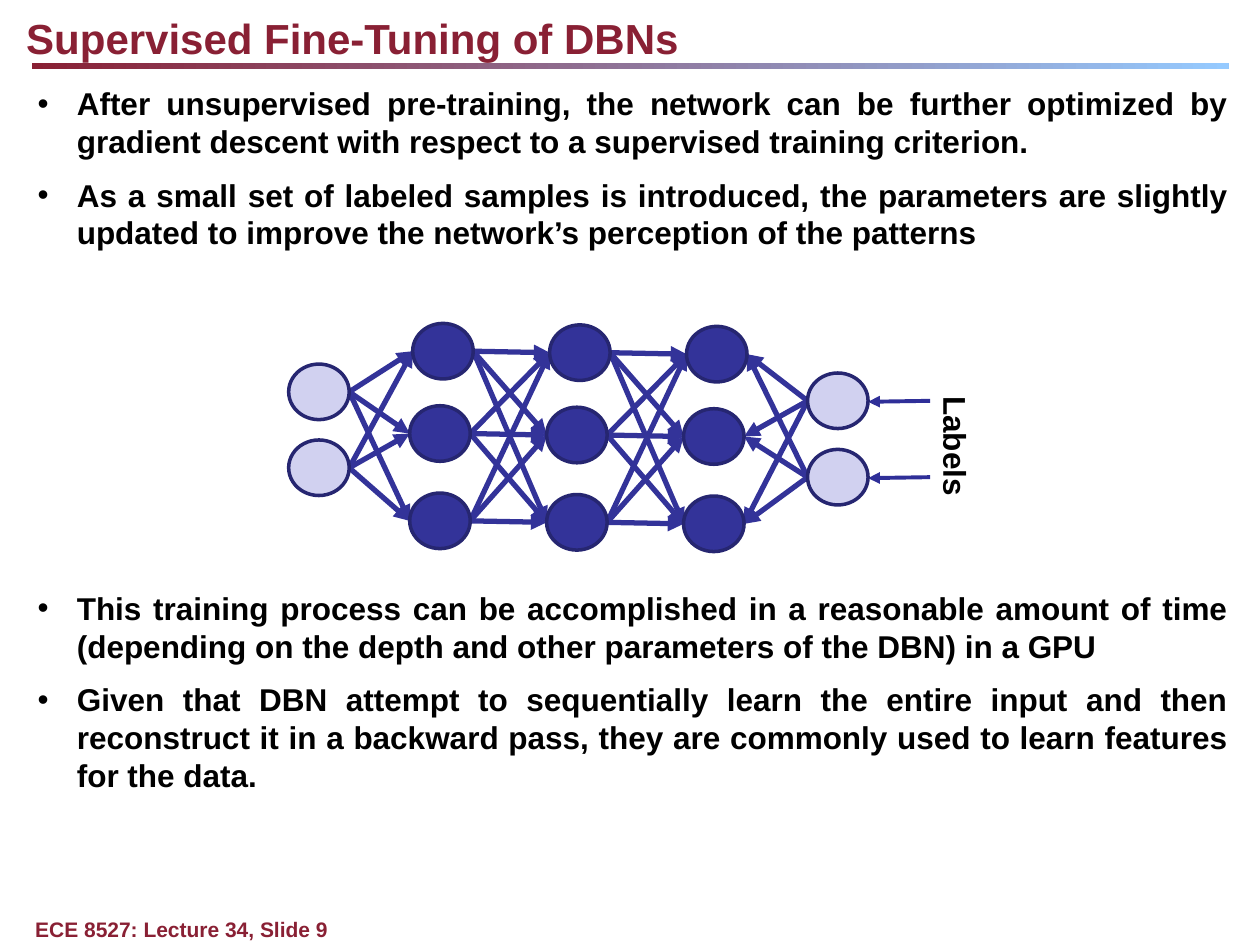
from dataclasses import dataclass
from itertools import product

from lxml.etree import SubElement
from pptx import Presentation
from pptx.dml.color import RGBColor
from pptx.enum.shapes import MSO_CONNECTOR, MSO_SHAPE
from pptx.enum.text import PP_ALIGN
from pptx.oxml.ns import qn
from pptx.shapes.group import GroupShape
from pptx.slide import Slide
from pptx.text.text import TextFrame, _Paragraph
from pptx.util import Cm, Pt

MAROON, SKY, BLACK = "892034", "95CAFF", "000000"
INDIGO, NAVY, LAVENDER = "333399", "262671", "D1D1F0"
LABEL_ARROW = "2F2F98"
NODE_WIDTH, NODE_HEIGHT = 1.22, 1.12
INDENT = 0.79

BULLETS = [
    "After unsupervised pre-training, the network can be further optimized by "
    "gradient descent with respect to a supervised training criterion.",
    "As a small set of labeled samples is introduced, the parameters are slightly "
    "updated to improve the network’s perception of the patterns",
    "This training process can be accomplished in a reasonable amount of time "
    "(depending on the depth and other parameters of the DBN) in a GPU",
    "Given that DBN attempt to sequentially learn the entire input and then "
    "reconstruct it in a backward pass, they are commonly used to learn features "
    "for the data.",
]
FIRST_BULLET_BELOW_NETWORK = 2


@dataclass(frozen=True)
class Node:
    """A neuron, placed by its centre in centimetres."""
    x: float
    y: float
    color: str

    @property
    def left(self) -> float:
        return self.x - NODE_WIDTH / 2

    @property
    def right(self) -> float:
        return self.x + NODE_WIDTH / 2


def rgb(color: str) -> RGBColor:
    return RGBColor.from_string(color)


def add_text_frame(shapes, left: float, top: float, width: float, height: float,
                   inset: bool = False, wrap: bool = True) -> TextFrame:
    frame = shapes.add_textbox(Cm(left), Cm(top), Cm(width), Cm(height)).text_frame
    frame.word_wrap = wrap
    if not inset:
        frame.margin_left = frame.margin_right = Cm(0)
        frame.margin_top = frame.margin_bottom = Cm(0)
    return frame


def add_run(paragraph: _Paragraph, text: str, size: float, color: str) -> None:
    run = paragraph.add_run()
    run.text = text
    run.font.name = "Arial"
    run.font.size = Pt(size)
    run.font.bold = True
    run.font.color.rgb = rgb(color)


def add_bullet(paragraph: _Paragraph) -> None:
    properties = paragraph._p.get_or_add_pPr()
    properties.set("marL", str(Cm(INDENT)))
    properties.set("indent", str(-Cm(INDENT)))
    SubElement(properties, qn("a:buFont"), typeface="Arial")
    SubElement(properties, qn("a:buChar"), char="•")


def add_title_rule(slide: Slide) -> None:
    rule = slide.shapes.add_shape(
        MSO_SHAPE.RECTANGLE, Cm(0.64), Cm(1.27), Cm(24.13), Cm(0.13))
    rule.shadow.inherit = False
    rule.line.fill.background()
    rule.fill.gradient()
    rule.fill.gradient_angle = 0
    for stop, color in zip(rule.fill.gradient_stops, (MAROON, SKY)):
        stop.color.rgb = rgb(color)


def add_body(slide: Slide) -> None:
    frame = add_text_frame(slide.shapes, 0.76, 1.7, 24, 16.33)
    for index, text in enumerate(BULLETS):
        paragraph = frame.add_paragraph() if index else frame.paragraphs[0]
        paragraph.alignment = PP_ALIGN.JUSTIFY
        if index == FIRST_BULLET_BELOW_NETWORK:
            paragraph.space_before = Pt(184)
        paragraph.space_after = Pt(9)
        add_bullet(paragraph)
        add_run(paragraph, text, 18, BLACK)


def add_arrow(group: GroupShape, start: tuple[float, float],
              end: tuple[float, float], color: str, weight: float) -> None:
    arrow = group.shapes.add_connector(
        MSO_CONNECTOR.STRAIGHT, *(Cm(length) for length in (*start, *end)))
    arrow.line.color.rgb = rgb(color)
    arrow.line.width = Pt(weight)
    properties = arrow._element.spPr
    SubElement(properties.find(qn("a:ln")), qn("a:tailEnd"), type="triangle")
    SubElement(properties, qn("a:effectLst"))


def add_node(group: GroupShape, node: Node) -> None:
    circle = group.shapes.add_shape(
        MSO_SHAPE.OVAL, Cm(node.left), Cm(node.y - NODE_HEIGHT / 2),
        Cm(NODE_WIDTH), Cm(NODE_HEIGHT))
    circle.shadow.inherit = False
    circle.fill.solid()
    circle.fill.fore_color.rgb = rgb(node.color)
    circle.line.color.rgb = rgb(NAVY)
    circle.line.width = Pt(2)


def hidden_layer(number: int) -> list[Node]:
    """Each layer stands one step right of the last, and slightly lower."""
    x, drop = 8.87 + 2.76 * number, 0.03 * number
    centres = [(x + 0.06, 7.08), (x, 8.74), (x, 10.5)]
    return [Node(cx, cy + drop, INDIGO) for cx, cy in centres]


def add_network(slide: Slide) -> None:
    inputs = [Node(6.43, y, LAVENDER) for y in (7.9, 9.43)]
    outputs = [Node(16.89, y, LAVENDER) for y in (8.08, 9.62)]
    hidden = [hidden_layer(number) for number in range(3)]
    group = slide.shapes.add_group_shape()

    forward = [inputs, *hidden]
    for sources, targets in zip(forward, forward[1:]):
        for source, target in product(sources, targets):
            add_arrow(group, (source.right, source.y), (target.left, target.y),
                      INDIGO, 3)
    for source, target in product(outputs, hidden[-1]):
        add_arrow(group, (source.left, source.y), (target.right, target.y),
                  INDIGO, 3)
    for output in outputs:
        add_arrow(group, (18.75, output.y), (output.right, output.y + 0.02),
                  LABEL_ARROW, 2.25)
    for layer in (*forward, outputs):
        for node in layer:
            add_node(group, node)

    labels = add_text_frame(group.shapes, 17.98, 8.51, 2.57, 1.02,
                            inset=True, wrap=False)
    add_run(labels.paragraphs[0], "Labels", 18, BLACK)
    group.shapes[-1].rotation = 90


def main() -> None:
    deck = Presentation()
    deck.slide_width, deck.slide_height = Cm(25.4), Cm(19.05)
    slide = deck.slides.add_slide(deck.slide_layouts[6])

    add_title_rule(slide)
    footer = add_text_frame(slide.shapes, 0.71, 18.47, 22.66, 0.51)
    add_run(footer.paragraphs[0], "ECE 8527: Lecture 34, Slide 9", 12, MAROON)
    title = add_text_frame(slide.shapes, 0.53, 0.25, 19.05, 1.02)
    add_run(title.paragraphs[0], "Supervised Fine-Tuning of DBNs", 24, MAROON)
    add_body(slide)
    add_network(slide)
    deck.save("out.pptx")


if __name__ == "__main__":
    main()
